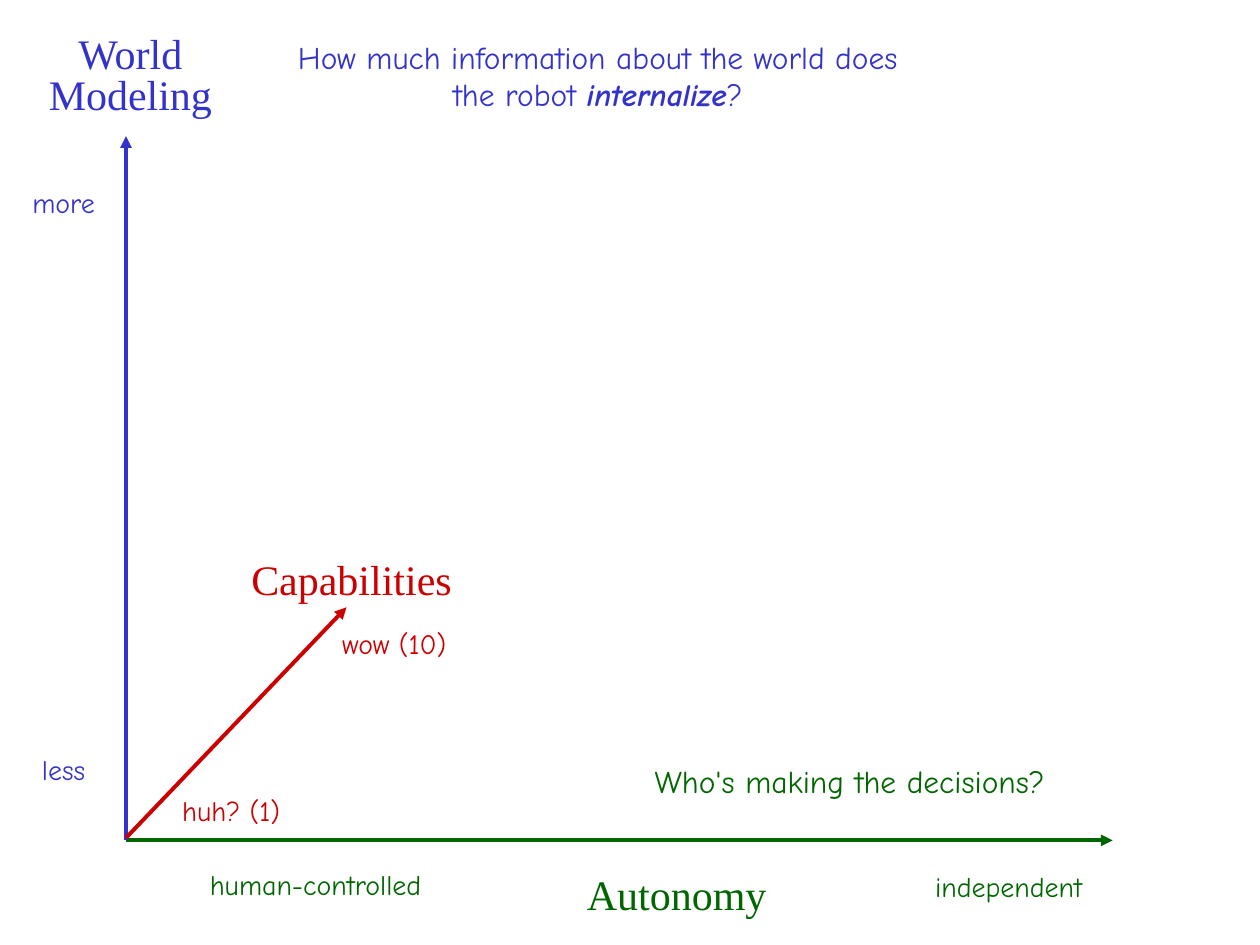
import pptx
import pptx.util
import pptx.dml.color
import pptx.enum.shapes
import pptx.enum.text
import pptx.oxml.ns
from lxml import etree

Inches = pptx.util.Inches
COLORS = {"autonomy": "006600", "modeling": "3333CC", "capabilities": "CC0000"}
HEADING = {"font": "Times New Roman", "size": 24}
QUESTION = {"font": "Comic Neue", "size": 18}
LABEL = {"font": "Comic Neue", "size": 16}

# axis, start, end
AXES = [
    ("autonomy", (1, 6.67), (8.83, 6.67)),
    ("modeling", (1, 6.67), (1, 1.08)),
    ("capabilities", (1, 6.65), (2.75, 4.82)),
]

# axis, style, (left, top, width, height), line spacing, text; *marks* emphasis
TEXTS = [
    ("autonomy", HEADING, (4.41, 6.84, 1.92, 0.5), 1, "Autonomy"),
    ("autonomy", LABEL, (1.34, 6.84, 2.33, 0.37), 1, "human-controlled"),
    ("autonomy", LABEL, (6.84, 6.85, 2.33, 0.37), 1, "independent"),
    ("autonomy", QUESTION, (4.16, 6, 5.17, 0.4), 1, "Who's making the decisions?"),
    ("modeling", HEADING, (0.16, 0.25, 1.75, 0.74), 0.8, "World Modeling"),
    ("modeling", LABEL, (0.09, 5.84, 0.83, 0.45), 1.3, "less"),
    ("modeling", LABEL, (0.04, 1.45, 0.93, 0.34), 0.9, "more"),
    ("modeling", QUESTION, (2.16, 0.25, 5.17, 0.7), 1,
     "How much information about the world does the robot *internalize*?"),
    ("capabilities", HEADING, (1.83, 4.34, 1.92, 0.5), 1, "Capabilities"),
    ("capabilities", LABEL, (1.25, 6.17, 1.17, 0.45), 1.3, "huh? (1)"),
    ("capabilities", LABEL, (2.51, 4.84, 1.24, 0.45), 1.3, "wow (10)"),
]


def rgb(axis):
    return pptx.dml.color.RGBColor.from_string(COLORS[axis])


def add_axis(slide, axis, start, end):
    connector = slide.shapes.add_connector(
        pptx.enum.shapes.MSO_CONNECTOR.STRAIGHT, *map(Inches, start + end))
    connector.line.color.rgb = rgb(axis)
    connector.line.width = pptx.util.Pt(2.25)
    qn = pptx.oxml.ns.qn
    properties = connector.element.spPr
    etree.SubElement(properties.find(qn("a:ln")), qn("a:tailEnd"), type="triangle")
    etree.SubElement(properties, qn("a:effectLst"))


def add_text(slide, text, *, axis, box, spacing, font, size):
    """Add a centred text box; parts between asterisks are bold italic."""
    shape = slide.shapes.add_textbox(*map(Inches, box))
    frame = shape.text_frame
    frame.word_wrap = True
    frame.auto_size = pptx.enum.text.MSO_AUTO_SIZE.SHAPE_TO_FIT_TEXT
    paragraph = frame.paragraphs[0]
    paragraph.alignment = pptx.enum.text.PP_ALIGN.CENTER
    paragraph.line_spacing = float(spacing)
    for index, part in enumerate(text.split("*")):
        run = paragraph.add_run()
        run.text = part
        run.font.name = font
        run.font.size = pptx.util.Pt(size)
        run.font.color.rgb = rgb(axis)
        run.font.bold = run.font.italic = index % 2 == 1


def main():
    presentation = pptx.Presentation()
    presentation.slide_width = Inches(10)
    presentation.slide_height = Inches(7.5)
    slide = presentation.slides.add_slide(presentation.slide_layouts[6])
    for axis, start, end in AXES:
        add_axis(slide, axis, start, end)
    for axis, style, box, spacing, text in TEXTS:
        add_text(slide, text, axis=axis, box=box, spacing=spacing, **style)
    presentation.save("out.pptx")


if __name__ == "__main__":
    main()
